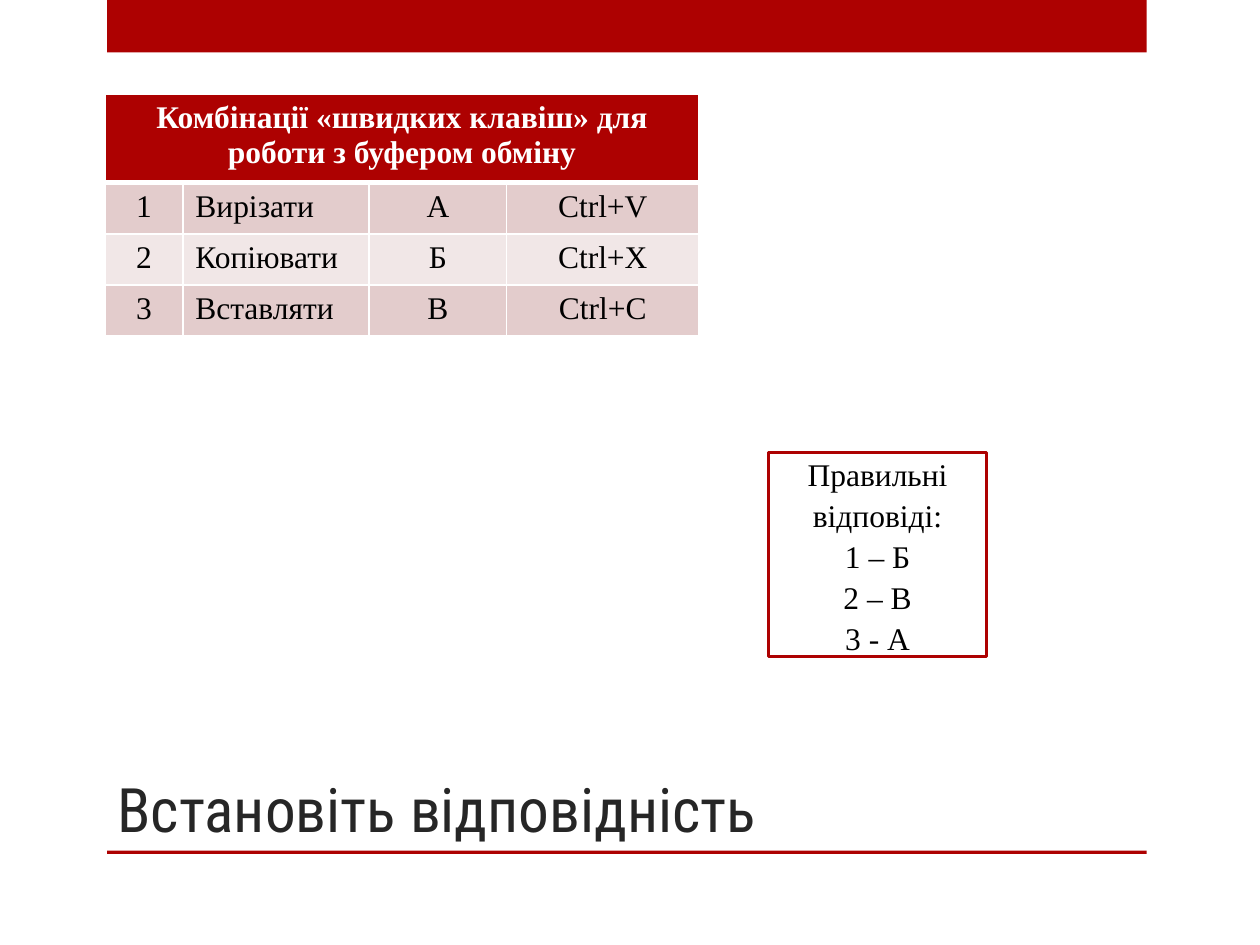
"""Build a matching-exercise slide about clipboard shortcuts."""
from dataclasses import dataclass

from lxml import etree
from pptx import Presentation
from pptx.dml.color import RGBColor
from pptx.enum import shapes, text
from pptx.oxml import ns
from pptx.util import Pt

RED, WHITE, BLACK = "AD0101", "FFFFFF", "000000"
SERIF = "Times New Roman"
LEFT, CENTER = text.PP_ALIGN.LEFT, text.PP_ALIGN.CENTER
COLUMN_WIDTHS = (44.5, 106.5, 78.5, 110)
HEADER_HEIGHT, ROW_HEIGHT = 46.5, 29.2
HEADER = "Комбінації «швидких клавіш» для роботи з буфером обміну"
ROWS = (
    ("1", "Вирізати", "А", "Ctrl+V"),
    ("2", "Копіювати", "Б", "Ctrl+X"),
    ("3", "Вставляти", "В", "Ctrl+C"),
)
BANDS = ("E3CCCC", "F1E7E7")
ANSWERS = "Правильні відповіді:\n1 – Б\n2 – В\n3 - А"


@dataclass(frozen=True)
class Area:
    """A rectangle in points."""

    left: float
    top: float
    width: float
    height: float

    def lengths(self) -> tuple:
        """Return the four lengths for a python-pptx call."""
        return tuple(Pt(v) for v in (self.left, self.top, self.width, self.height))


@dataclass(frozen=True)
class TextStyle:
    """The look of a piece of text."""

    size: float
    font: str = SERIF
    color: str = BLACK
    bold: bool = False
    align: text.PP_ALIGN = CENTER
    spacing: float = 1.0


BARS = (Area(61.2, 0, 594, 30), Area(61.2, 486, 594, 2))
TITLE_AREA = Area(60, 360, 534, 126)
TABLE_AREA = Area(60, 54, sum(COLUMN_WIDTHS), HEADER_HEIGHT + len(ROWS) * ROW_HEIGHT)
ANSWER_AREA = Area(439.2, 258.5, 124.6, 116.6)


def rgb(value: str) -> RGBColor:
    """Turn a hex string into a colour."""
    return RGBColor.from_string(value)


def write(frame, content: str, style: TextStyle) -> None:
    """Fill a text frame and format every run."""
    frame.text = content
    frame.word_wrap = True
    for para in frame.paragraphs:
        para.alignment = style.align
        para.line_spacing = style.spacing
        for span in para.runs:
            span.font.name = style.font
            span.font.size = Pt(style.size)
            span.font.bold = style.bold
            span.font.color.rgb = rgb(style.color)


def draw_box(page, area: Area, fill: str, line: str = ""):
    """Draw a flat rectangle with an optional outline."""
    box = page.shapes.add_shape(shapes.MSO_SHAPE.RECTANGLE, *area.lengths())
    box.shadow.inherit = False
    box.fill.solid()
    box.fill.fore_color.rgb = rgb(fill)
    if line:
        box.line.color.rgb = rgb(line)
        box.line.width = Pt(1.75)
    else:
        box.line.fill.background()
    return box


def draw_title(page, content: str) -> None:
    """Write the slide heading at the bottom of its area."""
    box = page.shapes.add_textbox(*TITLE_AREA.lengths())
    write(box.text_frame, content, TextStyle(35, "Roboto Condensed", "262626", align=LEFT))
    box.text_frame.vertical_anchor = text.MSO_ANCHOR.BOTTOM


def set_cell(cell, content: str, fill: str, style: TextStyle, top: float, bottom: float) -> None:
    """Give a cell its white borders, fill and text."""
    properties = cell._tc.get_or_add_tcPr()
    for side, width in (("L", 1), ("R", 1), ("T", top), ("B", bottom)):
        border = etree.SubElement(properties, ns.qn(f"a:ln{side}"), w=str(Pt(width)))
        paint = etree.SubElement(border, ns.qn("a:solidFill"))
        etree.SubElement(paint, ns.qn("a:srgbClr"), val=WHITE)
    cell.fill.solid()
    cell.fill.fore_color.rgb = rgb(fill)
    write(cell.text_frame, content, style)


def draw_table(page) -> None:
    """Draw the shortcut table with its merged header."""
    frame = page.shapes.add_table(len(ROWS) + 1, len(COLUMN_WIDTHS), *TABLE_AREA.lengths())
    table = frame.table
    for column, width in zip(table.columns, COLUMN_WIDTHS):
        column.width = Pt(width)
    for index, row in enumerate(table.rows):
        row.height = Pt(ROW_HEIGHT if index else HEADER_HEIGHT)
    last = len(COLUMN_WIDTHS) - 1
    table.cell(0, 0).merge(table.cell(0, last))
    for column in range(last + 1):
        content = "" if column else HEADER
        set_cell(table.cell(0, column), content, RED, TextStyle(18, color=WHITE, bold=True), 1, 3)
    for index, values in enumerate(ROWS):
        for column, value in enumerate(values):
            style = TextStyle(18, align=LEFT if column == 1 else CENTER)
            top = 1 if index else 3
            set_cell(table.cell(index + 1, column), value, BANDS[index % 2], style, top, 1)


def main() -> None:
    """Build and save the deck."""
    deck = Presentation()
    deck.slide_width, deck.slide_height = Pt(720), Pt(540)
    page = deck.slides.add_slide(deck.slide_layouts[6])
    for area in BARS:
        draw_box(page, area, RED)
    draw_title(page, "Встановіть відповідність")
    draw_table(page)
    answer_box = draw_box(page, ANSWER_AREA, WHITE, RED)
    write(answer_box.text_frame, ANSWERS, TextStyle(18, spacing=1.08))
    deck.save("out.pptx")


if __name__ == "__main__":
    main()
